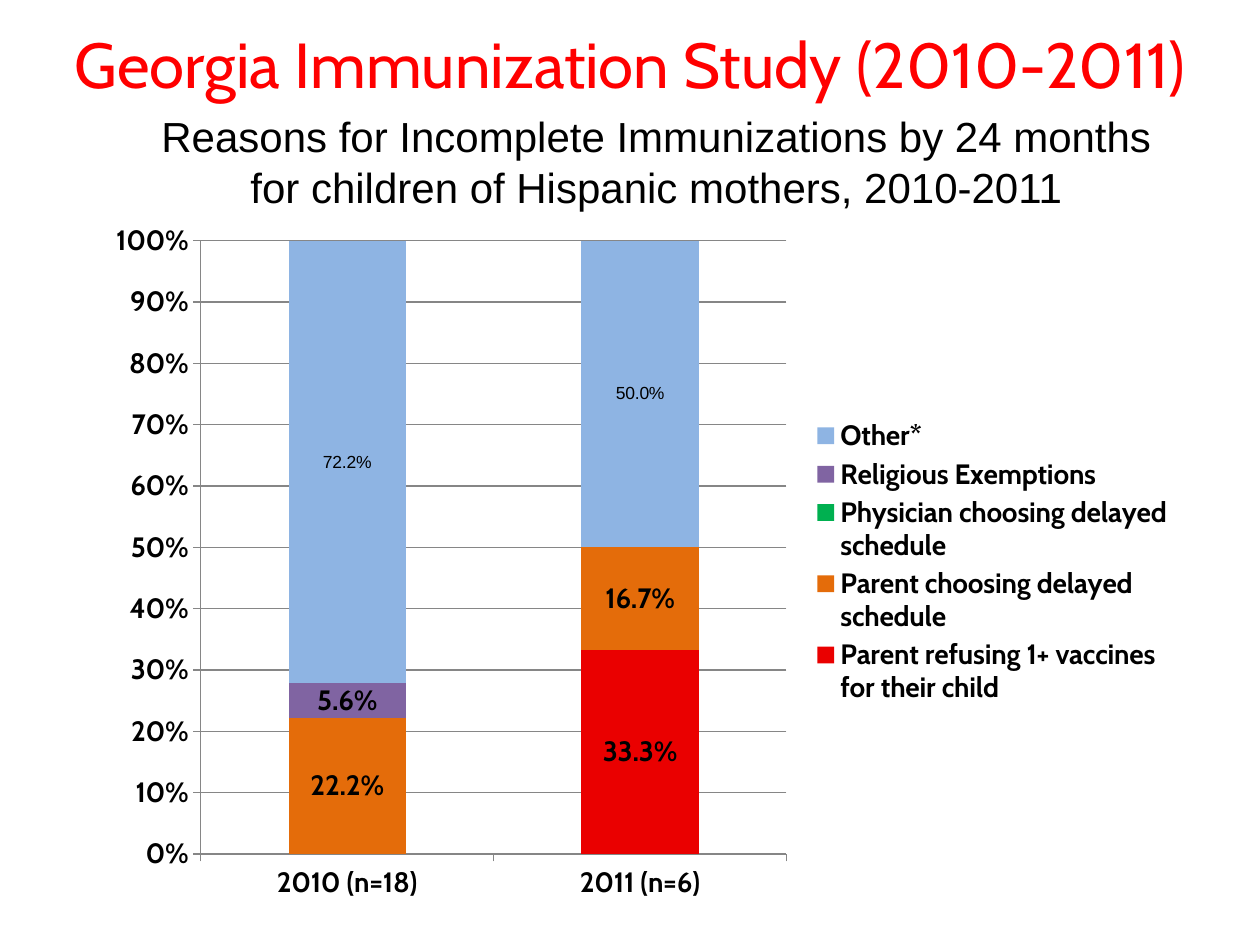
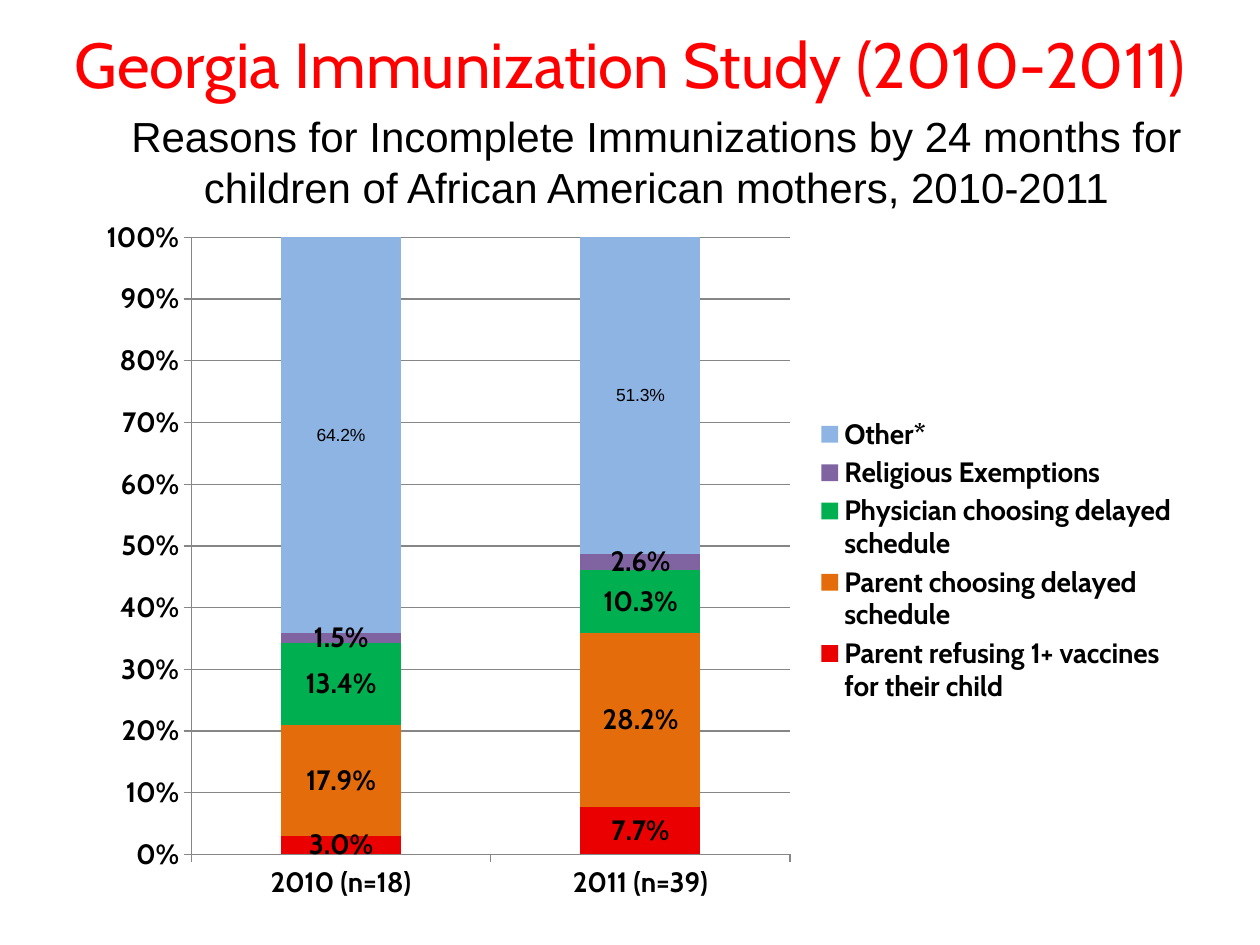
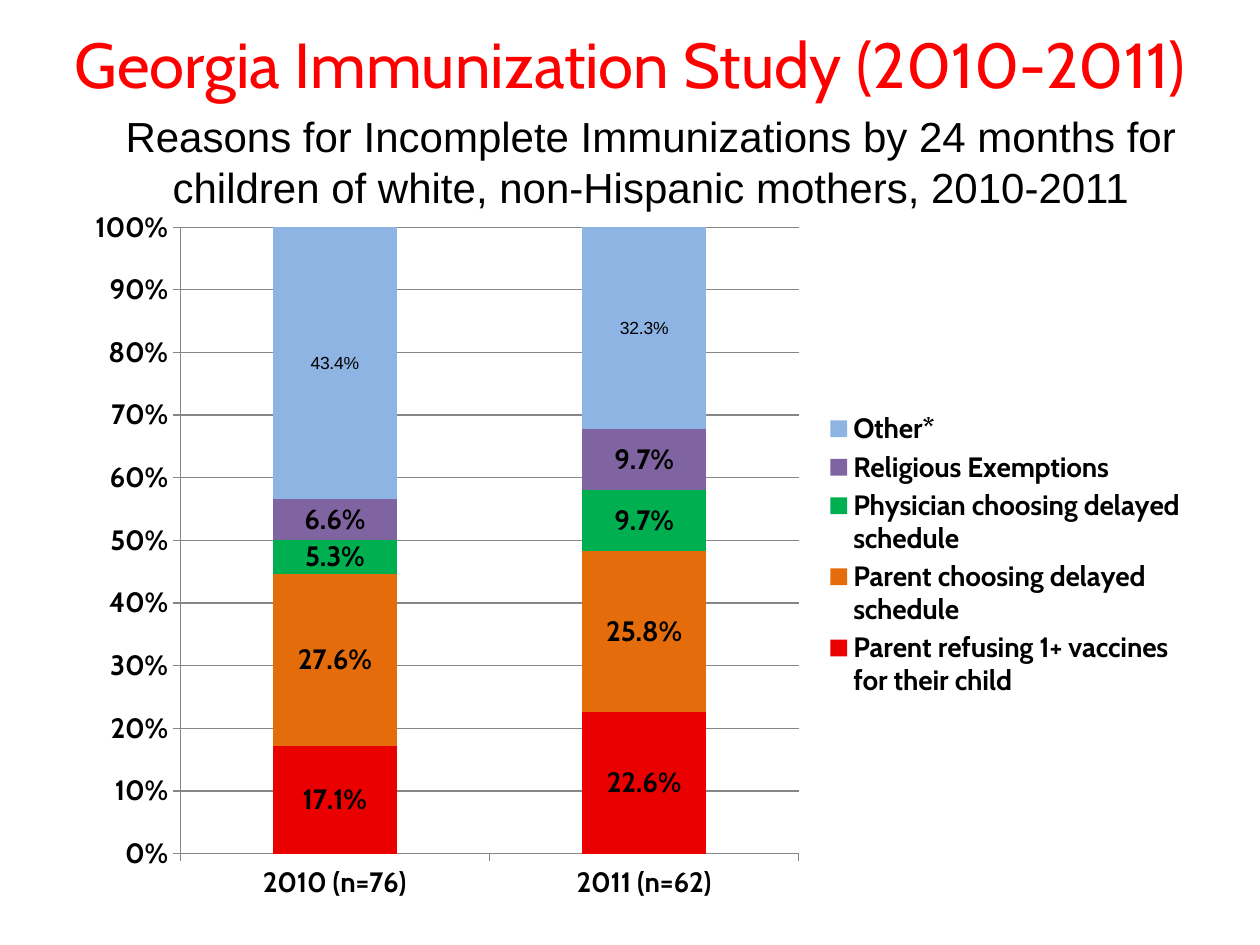
"""Build three slides on why immunizations were incomplete, one per group of mothers."""
from dataclasses import dataclass

from pptx import Presentation
from pptx.chart.data import CategoryChartData
from pptx.dml.color import RGBColor
from pptx.enum.chart import XL_CHART_TYPE as ChartType
from pptx.enum.chart import XL_LABEL_POSITION as LabelPos
from pptx.enum.chart import XL_LEGEND_POSITION as LegendPos
from pptx.enum.chart import XL_TICK_MARK as Tick
from pptx.enum.text import MSO_ANCHOR as Anchor
from pptx.enum.text import MSO_AUTO_SIZE as AutoSize
from pptx.enum.text import PP_ALIGN as Align
from pptx.util import Cm, Pt


@dataclass(frozen=True)
class Theme:
    heading_font: str = "Cabin"
    body_font: str = "Arial"
    title_color: str = "FF0000"
    text_color: str = "000000"
    grid_color: str = "868686"
    title_size: float = 36.3
    subtitle_size: float = 24
    chart_size: float = 16
    small_size: float = 10


REASONS = (
    ("Parent refusing 1+ vaccines for their child", "EA0000"),
    ("Parent choosing delayed schedule", "E46C0A"),
    ("Physician choosing delayed schedule", "00B050"),
    ("Religious Exemptions", "8064A2"),
    ("Other*", "8EB4E3"),
)

GROUPS = (
    {
        "mothers": "Hispanic",
        "subtitle_box": (2.97, 2.11, 20.52, 2.31),
        "chart_box": (1.9, 4.24, 22.02, 14.17),
        "counts": (18, 6),
        "shares": ((0, 0.333), (0.222, 0.167), (0, 0), (0.056, 0), (0.722, 0.5)),
    },
    {
        "mothers": "African American",
        "subtitle_box": (2.34, 2.11, 21.79, 2.31),
        "chart_box": (1.7, 4.17, 22.3, 14.25),
        "counts": (18, 39),
        "shares": ((0.03, 0.077), (0.179, 0.282), (0.134, 0.103),
                   (0.015, 0.026), (0.642, 0.513)),
    },
    {
        "mothers": "white, non-Hispanic",
        "subtitle_box": (2.11, 2.11, 22.02, 2.31),
        "chart_box": (1.47, 3.96, 22.71, 14.45),
        "counts": (76, 62),
        "shares": ((0.171, 0.226), (0.276, 0.258), (0.053, 0.097),
                   (0.066, 0.097), (0.434, 0.323)),
    },
)


class Deck:
    def __init__(self, theme):
        self.theme = theme
        self.prs = Presentation()
        self.prs.slide_width, self.prs.slide_height = Cm(25.4), Cm(19.05)
        self.s = None

    def new_slide(self):
        self.s = self.prs.slides.add_slide(self.prs.slide_layouts[6])

    def style(self, font, name, size, color, bold=False):
        font.name, font.size, font.bold = name, Pt(size), bold
        font.color.rgb = RGBColor.from_string(color)

    def text(self, box, words, font, size, color):
        tf = self.s.shapes.add_textbox(*map(Cm, box)).text_frame
        tf.word_wrap = True
        p = tf.paragraphs[0]
        p.alignment = Align.CENTER
        r = p.add_run()
        r.text = words
        self.style(r.font, font, size, color)
        return tf

    def title(self, words):
        t = self.theme
        tf = self.text((0.43, 0, 24.56, 2.74), words, t.heading_font,
                       t.title_size, t.title_color)
        tf.vertical_anchor = Anchor.MIDDLE
        tf.paragraphs[0].line_spacing = 0.9

    def subtitle(self, box, words):
        t = self.theme
        tf = self.text(box, words, t.body_font, t.subtitle_size, t.text_color)
        tf.auto_size = AutoSize.SHAPE_TO_FIT_TEXT

    def chart(self, box, counts, shares):
        t = self.theme
        data = CategoryChartData(number_format="0.0%")
        data.categories = [f"{year} (n={n})" for year, n in zip((2010, 2011), counts)]
        for (reason, _), values in zip(REASONS, shares):
            data.add_series(reason, values)
        chart = self.s.shapes.add_chart(
            ChartType.COLUMN_STACKED_100, *map(Cm, box), data).chart
        chart.has_title = False
        self.style(chart.font, t.heading_font, t.chart_size, t.text_color, True)
        chart.has_legend = True
        chart.legend.position = LegendPos.RIGHT
        chart.legend.include_in_layout = False
        self.axes(chart)
        plot = chart.plots[0]
        plot.gap_width, plot.overlap, plot.vary_by_categories = 150, 100, False
        for series, (reason, color) in zip(plot.series, REASONS):
            series.format.fill.solid()
            series.format.fill.fore_color.rgb = RGBColor.from_string(color)
            self.labels(series.data_labels, reason == "Other*")

    def axes(self, chart):
        for axis in (chart.category_axis, chart.value_axis):
            axis.major_tick_mark, axis.minor_tick_mark = Tick.OUTSIDE, Tick.NONE
            self.hairline(axis.format.line)
        axis = chart.value_axis
        axis.minimum_scale, axis.maximum_scale, axis.major_unit = 0, 1, 0.1
        axis.tick_labels.number_format = "0%"
        axis.tick_labels.number_format_is_linked = False
        axis.has_major_gridlines = True
        self.hairline(axis.major_gridlines.format.line)

    def hairline(self, line):
        line.color.rgb = RGBColor.from_string(self.theme.grid_color)
        line.width = Pt(0.75)

    def labels(self, labels, small):
        t = self.theme
        labels.show_value = True
        labels.number_format, labels.number_format_is_linked = "0.0%;;", False
        labels.position = LabelPos.CENTER
        name, size = ((t.body_font, t.small_size) if small
                      else (t.heading_font, t.chart_size))
        self.style(labels.font, name, size, t.text_color, not small)


def main():
    deck = Deck(Theme())
    for group in GROUPS:
        deck.new_slide()
        deck.title("Georgia Immunization Study (2010-2011)")
        deck.subtitle(group["subtitle_box"],
                      "Reasons for Incomplete Immunizations by 24 months "
                      f"for children of {group['mothers']} mothers, 2010-2011")
        deck.chart(group["chart_box"], group["counts"], group["shares"])
    deck.prs.save("out.pptx")


if __name__ == "__main__":
    main()
